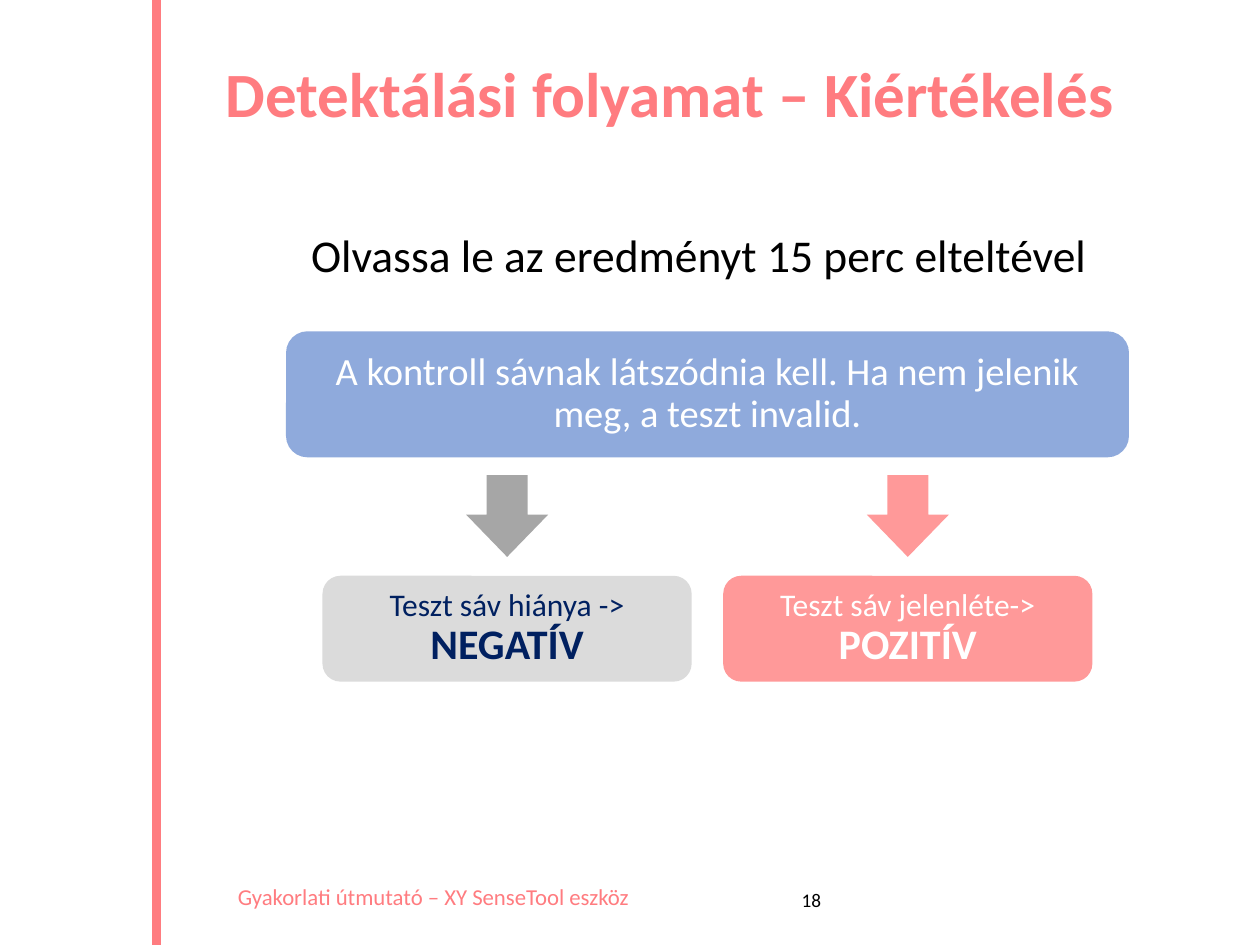
from lxml import etree
from pptx import Presentation
from pptx.dml.color import RGBColor
from pptx.enum.shapes import MSO_CONNECTOR, MSO_SHAPE
from pptx.enum.text import MSO_ANCHOR, PP_ALIGN
from pptx.oxml.ns import qn
from pptx.util import Inches, Pt

STRAIGHT = MSO_CONNECTOR.STRAIGHT
ROUNDED, DOWN_ARROW = MSO_SHAPE.ROUNDED_RECTANGLE, MSO_SHAPE.DOWN_ARROW
LEFT, CENTER = PP_ALIGN.LEFT, PP_ALIGN.CENTER
MIDDLE = MSO_ANCHOR.MIDDLE
COLORS = {
    "coral": "FF7C80", "pink": "FF9999", "blue": "8FAADC", "navy": "002060",
    "gray": "A6A6A6", "light": "DBDBDB", "white": "FFFFFF", "black": "000000",
}


def rgb(name):
    """Return the named colour."""
    return RGBColor.from_string(COLORS[name])


def style(p, size, color, align=LEFT, bold=False, spacing=1.0):
    """Format a whole paragraph."""
    p.alignment, p.line_spacing = align, spacing
    p.font.name, p.font.size, p.font.bold = "Calibri", Pt(size), bold
    p.font.color.rgb = rgb(color)


def add_text(s, box, text, size, color, wrap=True, **fmt):
    """Place a one-paragraph text box."""
    tf = s.shapes.add_textbox(*map(Inches, box)).text_frame
    tf.word_wrap = wrap
    p = tf.paragraphs[0]
    p.text = text
    style(p, size, color, **fmt)


def add_filled(s, kind, box, fill, adjustments):
    """Place a plain filled shape without outline or shadow."""
    sp = s.shapes.add_shape(kind, *map(Inches, box))
    sp.shadow.inherit = False
    sp.fill.solid()
    sp.fill.fore_color.rgb = rgb(fill)
    sp.line.fill.background()
    for i, value in enumerate(adjustments):
        sp.adjustments[i] = value
    return sp


def add_card(s, box, fill, text, size, color, result=None):
    """Place a rounded card with centred text and an optional bold result."""
    tf = add_filled(s, ROUNDED, box, fill, [0.17]).text_frame
    tf.word_wrap, tf.vertical_anchor = True, MIDDLE
    tf.margin_left = tf.margin_right = Inches(0.16)
    tf.margin_top = tf.margin_bottom = 0
    p = tf.paragraphs[0]
    p.text = text
    style(p, size, color, CENTER, spacing=0.9)
    if result:
        p.add_line_break()
        r = p.add_run()
        r.text = result
        r.font.size, r.font.bold = Pt(24), True


def add_frame(s, height):
    """Draw the side rule, footer and slide number."""
    line = s.shapes.add_connector(
        STRAIGHT, Inches(1.24), Inches(height), Inches(1.24), 0)
    line.line.color.rgb, line.line.width = rgb("coral"), Pt(5)
    etree.SubElement(line._element.spPr, qn("a:effectLst"))
    add_text(s, (1.79, 6.96, 3.5, 0.32),
             "Gyakorlati útmutató – XY SenseTool eszköz", 13, "coral")
    add_text(s, (6.22, 7, 0.44, 0.29), "18", 11, "black", align=CENTER)


def add_flow(s, x, y, w):
    """Draw the control card with an arrow and a card for each outcome."""
    add_card(s, (x, y, w, 1), "blue",
             "A kontroll sávnak látszódnia kell. Ha nem jelenik meg, "
             "a teszt invalid.", 22, "white")
    outcomes = [
        ("gray", "light", "navy", "Teszt sáv hiánya ->", "NEGATÍV"),
        ("pink", "pink", "white", "Teszt sáv jelenléte->", "POZITÍV"),
    ]
    card, arrow, gap = 2.93, 0.65, 0.25
    left = x + (w - 2 * card - gap) / 2
    for i, (arrow_fill, fill, color, text, result) in enumerate(outcomes):
        cx = left + i * (card + gap)
        add_filled(s, DOWN_ARROW,
                   (cx + (card - arrow) / 2, y + 1.14, arrow, arrow),
                   arrow_fill, [0.5, 0.515])
        add_card(s, (cx, y + 1.94, card, 0.84), fill, text, 18, color, result)


def main():
    """Build and save the slide."""
    prs = Presentation()
    prs.slide_width, prs.slide_height = Inches(10), Inches(7.5)
    s = prs.slides.add_slide(prs.slide_layouts[6])
    add_frame(s, 7.5)
    add_text(s, (1.69, 0.45, 7.63, 0.93), "Detektálási folyamat – Kiértékelés",
             36, "coral", bold=True, spacing=0.9)
    add_text(s, (2.37, 1.75, 6.49, 0.54),
             "Olvassa le az eredményt 15 perc elteltével", 26, "black",
             wrap=False)
    add_flow(s, 2.27, 2.63, 6.69)
    prs.save("out.pptx")


if __name__ == "__main__":
    main()
